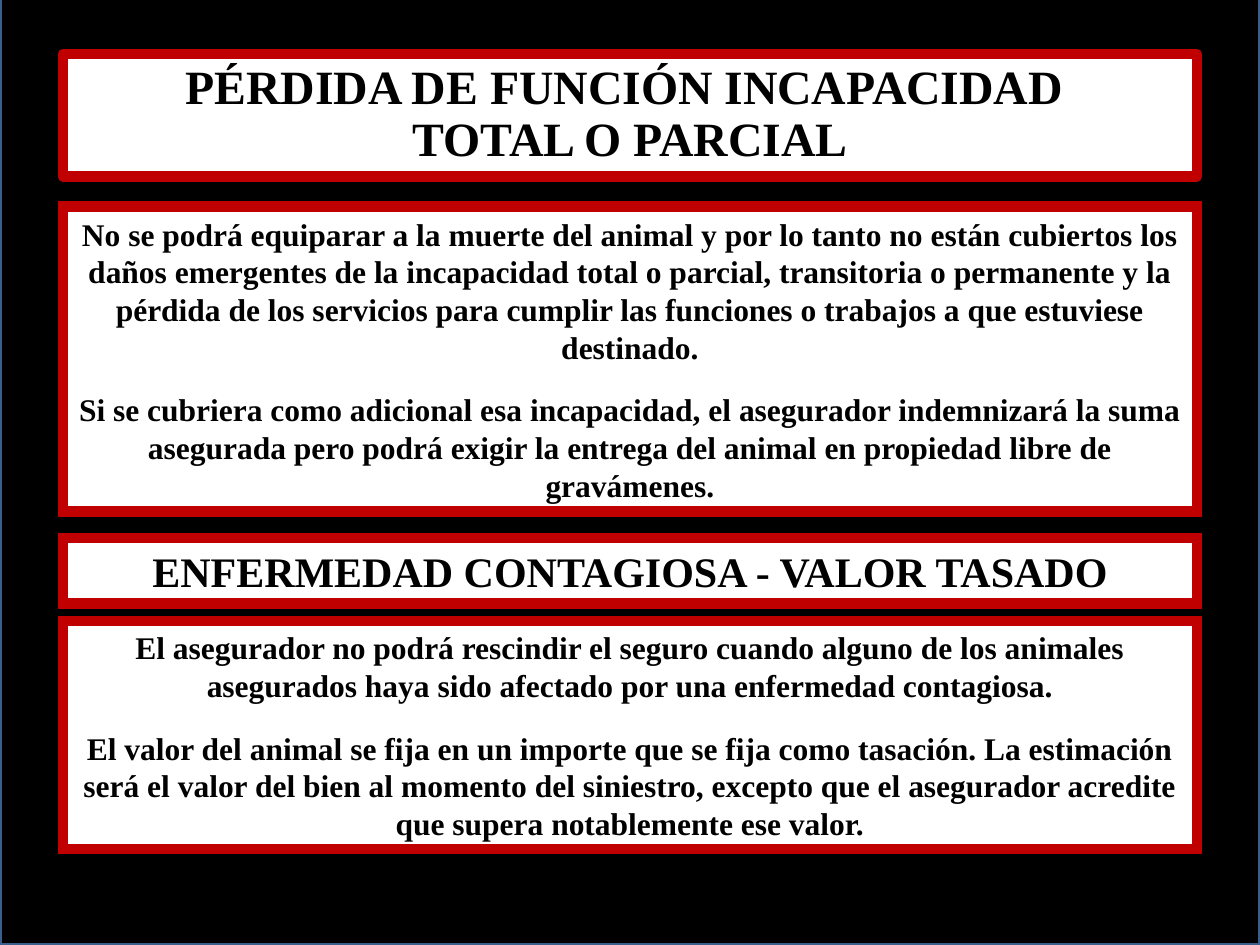
from lxml.etree import SubElement
from pptx import Presentation
from pptx.dml.color import RGBColor
from pptx.enum.shapes import MSO_SHAPE
from pptx.enum.text import MSO_ANCHOR, MSO_AUTO_SIZE, PP_ALIGN
from pptx.oxml.ns import qn
from pptx.util import Inches, Pt

FONT = "Times New Roman"
BLACK, WHITE, RED, BLUE = "000000", "FFFFFF", "C00000", "3A5F8C"

TITLE = "PÉRDIDA DE FUNCIÓN INCAPACIDAD \vTOTAL O PARCIAL"
LOSS_RULES = [
    "No se podrá equiparar a la muerte del animal y por lo tanto no están "
    "cubiertos los daños emergentes de la incapacidad total o parcial, "
    "transitoria o permanente y la pérdida de los servicios para cumplir las "
    "funciones o trabajos a que estuviese destinado.",
    "Si se cubriera como adicional esa incapacidad, el asegurador indemnizará "
    "la suma asegurada pero podrá exigir la entrega del animal en propiedad "
    "libre de gravámenes.",
]
DISEASE_HEADING = "ENFERMEDAD CONTAGIOSA - VALOR TASADO"
DISEASE_RULES = [
    "El asegurador no podrá rescindir el seguro cuando alguno de los animales "
    "asegurados haya sido afectado por una enfermedad contagiosa.",
    "El valor del animal se fija en un importe que se fija como tasación. La "
    "estimación será el valor del bien al momento del siniestro, excepto que "
    "el asegurador acredite que supera notablemente ese valor.",
]


def color(value):
    return RGBColor.from_string(value)


def add_box(slide, left, top, width, height, fill, line, line_width):
    box = slide.shapes.add_shape(
        MSO_SHAPE.RECTANGLE, Inches(left), Inches(top), Inches(width), Inches(height)
    )
    box.shadow.inherit = False
    box.fill.solid()
    box.fill.fore_color.rgb = color(fill)
    box.line.color.rgb = color(line)
    box.line.width = Pt(line_width)
    return box


def add_panel(slide, top, height, texts, size, spacing=1.0, mitered=True):
    panel = add_box(slide, 0.5, top, 9, height, WHITE, RED, 6)
    if mitered:
        SubElement(panel.line._get_or_add_ln(), qn("a:miter"), lim="800000")
    frame = panel.text_frame
    frame.word_wrap = True
    frame.auto_size = MSO_AUTO_SIZE.NONE
    frame.vertical_anchor = MSO_ANCHOR.MIDDLE
    for index, text in enumerate(texts):
        paragraph = frame.add_paragraph() if index else frame.paragraphs[0]
        paragraph.text = text
        paragraph.alignment = PP_ALIGN.CENTER
        paragraph.line_spacing = spacing
        paragraph.space_before = Pt(14 if index else 0)
        for run in paragraph.runs:
            run.font.name = FONT
            run.font.size = Pt(size)
            run.font.bold = True
            run.font.color.rgb = color(BLACK)


def main():
    presentation = Presentation()
    presentation.slide_width = Inches(10)
    presentation.slide_height = Inches(7.5)
    slide = presentation.slides.add_slide(presentation.slide_layouts[6])

    add_box(slide, 0, -0.16, 10, 7.66, BLACK, BLUE, 2)
    add_panel(slide, 0.43, 0.97, [TITLE], 27.3, spacing=0.9, mitered=False)
    add_panel(slide, 1.64, 2.42, LOSS_RULES, 18)
    add_panel(slide, 4.27, 0.52, [DISEASE_HEADING], 24)
    add_panel(slide, 4.93, 1.81, DISEASE_RULES, 18)

    presentation.save("out.pptx")


if __name__ == "__main__":
    main()
